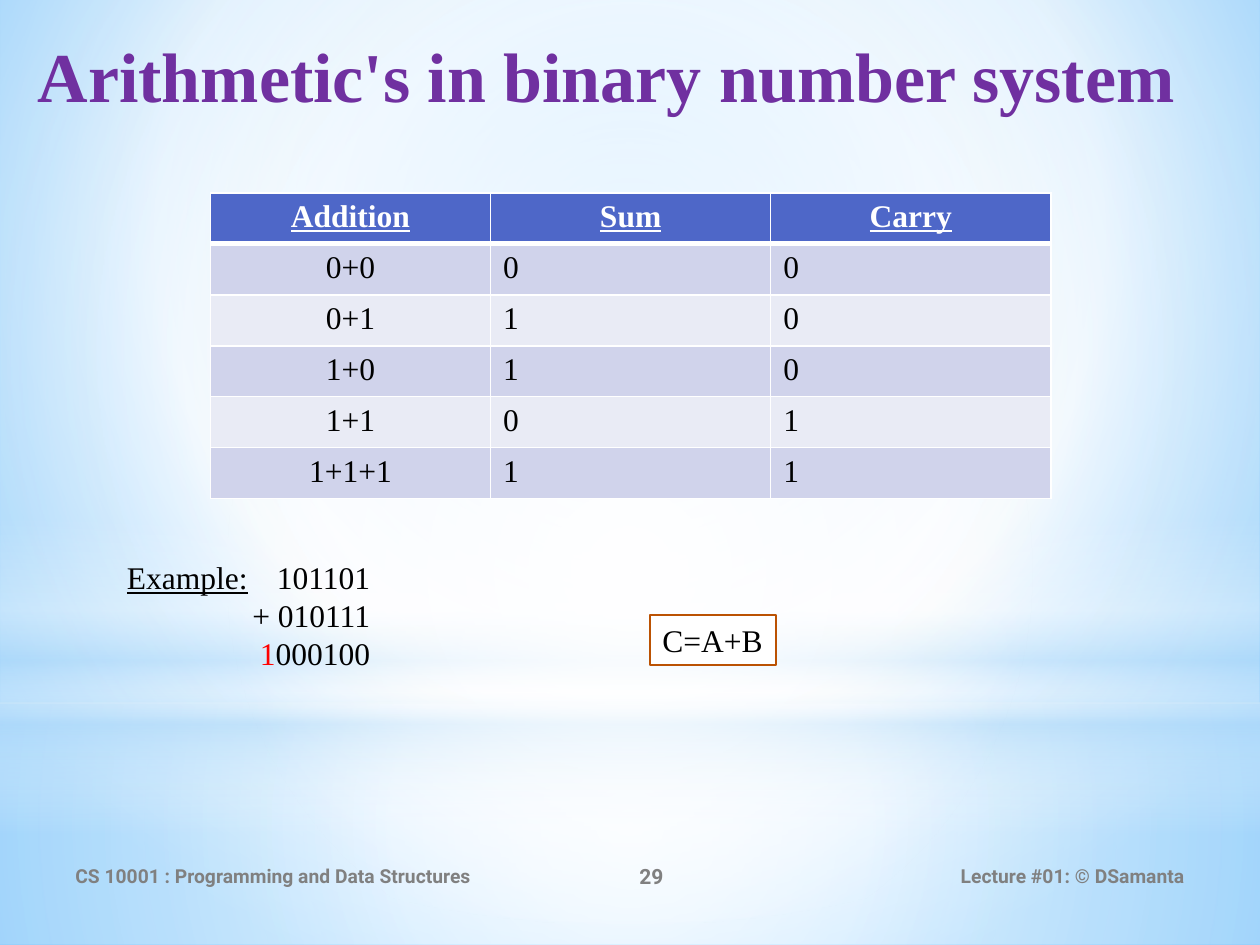
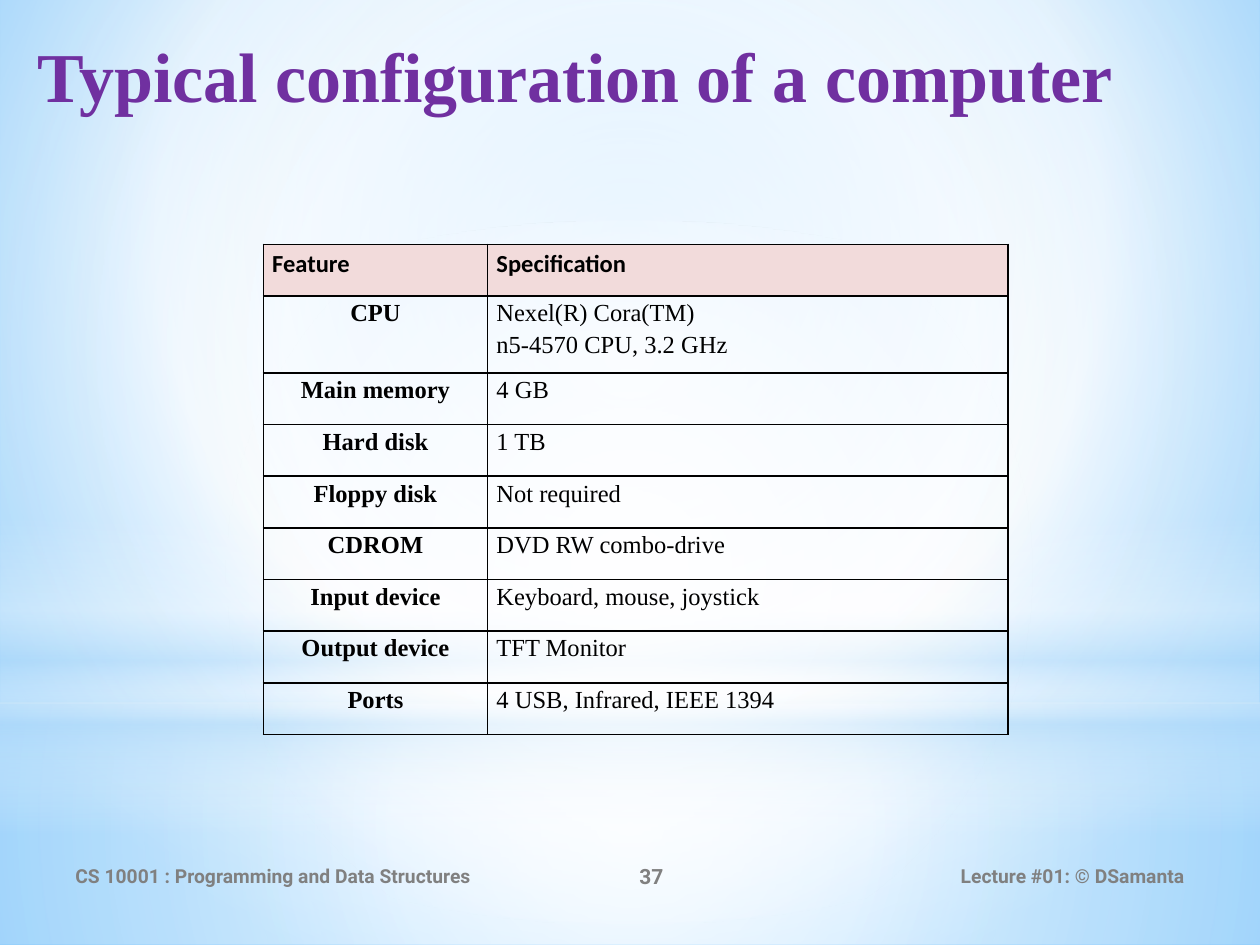
import lxml.etree
import pptx
import pptx.dml.color
import pptx.enum.shapes
import pptx.enum.text
import pptx.oxml.ns
import pptx.util

Inches = pptx.util.Inches
Pt = pptx.util.Pt
ALIGN = pptx.enum.text.PP_ALIGN
ANCHOR = pptx.enum.text.MSO_ANCHOR
SHAPE = pptx.enum.shapes.MSO_SHAPE
qn = pptx.oxml.ns.qn

COLORS = {
    "title": "7030A0", "footer": "808080", "ink": "000000", "white": "FFFFFF",
    "carry": "FF0000", "formula_line": "BB5203", "header": "4E67C8",
    "band_dark": "D0D3EB", "band_light": "E9EBF5", "feature_header": "F2DBDB",
    "sky": "9ED5FF", "deep_sky": "5BB9FF", "mist": "B4DCFA",
}
SERIF, SANS, FOOTER_FONT = "Times New Roman", "Calibri", "Roboto"
CENTRE = (50, 50, 50, 50)

# Backdrop layers: preset, box, (position, colour, opacity) stops, focus or None for vertical
BACKDROP = [
    (SHAPE.RECTANGLE, (0, 5.58, 10, 1.92),
     [(0, "white", 91), (37, "white", 76), (100, "mist", 79)], CENTRE),
    (SHAPE.RECTANGLE, (0, 0, 10, 5.58),
     [(0, "white", 89), (48, "white", 62), (100, "mist", 79)], CENTRE),
    (SHAPE.RECTANGLE, (0, 4.12, 10, 2.5),
     [(0, "white", 0), (29, "white", 30), (45, "mist", 40),
      (55, "white", 26), (65, "mist", 60), (100, "white", 0)], None),
    (SHAPE.OVAL, (0, 1.75, 10, 5.58), [(0, "white", 100), (56, "white", 0)], CENTRE),
]


def rgb(color):
    return pptx.dml.color.RGBColor.from_string(COLORS[color])


def inches(box):
    return [Inches(length) for length in box]


def add_xml(parent, tag, **attributes):
    return lxml.etree.SubElement(parent, qn(tag), {k: str(v) for k, v in attributes.items()})


def add_run(paragraph, text, size, font=SERIF, color="ink", bold=False, underline=False):
    run = paragraph.add_run()
    run.text = text
    run.font.size = Pt(size)
    run.font.name = font
    run.font.color.rgb = rgb(color)
    run.font.bold = bold
    run.font.underline = underline


def paint_gradient(owner, stops, focus):
    """Replace the owner's first solid fill by a gradient."""
    solid = next(owner.iter(qn("a:solidFill")))
    gradient = lxml.etree.Element(qn("a:gradFill"), rotWithShape="1")
    stop_list = add_xml(gradient, "a:gsLst")
    for position, color, opacity in stops:
        stop = add_xml(stop_list, "a:gs", pos=position * 1000)
        tint = add_xml(stop, "a:srgbClr", val=COLORS[color])
        if opacity < 100:
            add_xml(tint, "a:alpha", val=opacity * 1000)
    if focus:
        circle = add_xml(gradient, "a:path", path="circle")
        add_xml(circle, "a:fillToRect", **{s: v * 1000 for s, v in zip("ltrb", focus)})
    else:
        add_xml(gradient, "a:lin", ang=90 * 60000, scaled=0)
    solid.getparent().replace(solid, gradient)


def build_backdrop(master, slide):
    """Shape the layers on a slide, then hand them to the master."""
    master.background.fill.solid()
    paint_gradient(master.element,
                   [(0, "sky", 100), (60, "white", 100), (100, "deep_sky", 100)],
                   (20, 10, 20, 60))
    for order, (preset, box, stops, focus) in enumerate(BACKDROP):
        layer = slide.shapes.add_shape(preset, *inches(box))
        layer.shadow.inherit = False
        layer.line.fill.background()
        layer.fill.solid()
        paint_gradient(layer.element, stops, focus)
        layer.element.nvSpPr.cNvPr.set("id", str(100 + order))
        master.shapes.element.insert(2 + order, layer.element)


def add_title(slide, text):
    title = slide.shapes.title
    title.left, title.top, title.width, title.height = inches((0.2, 0.21, 9.53, 1.1))
    frame = title.text_frame
    frame.auto_size = pptx.enum.text.MSO_AUTO_SIZE.NONE
    frame.vertical_anchor = ANCHOR.TOP
    frame.margin_top = Inches(0.05)
    frame.paragraphs[0].alignment = ALIGN.LEFT
    add_run(frame.paragraphs[0], text, 40, color="title", bold=True)


def add_footer(slide, number):
    for text, left, width, size, align in [
            ("CS 10001 : Programming and Data Structures", 0.5, 3.67, 11, ALIGN.LEFT),
            (str(number), 4.17, 2, 12, ALIGN.CENTER),
            ("Lecture #01: © DSamanta", 6.75, 2.75, 11, ALIGN.RIGHT)]:
        frame = slide.shapes.add_textbox(*inches((left, 6.75, width, 0.4))).text_frame
        frame.word_wrap = True
        frame.vertical_anchor = ANCHOR.MIDDLE
        frame.paragraphs[0].alignment = align
        add_run(frame.paragraphs[0], text, size, FOOTER_FONT, "footer", bold=True)


def style_cell(cell, fill, border, bottom=1):
    """Borders come first, as the cell properties require."""
    properties = cell._tc.get_or_add_tcPr()
    for side in "LRTB":
        width = bottom if side == "B" else 1
        line = add_xml(properties, "a:ln" + side, w=Pt(width))
        add_xml(add_xml(line, "a:solidFill"), "a:srgbClr", val=COLORS[border])
    if fill:
        cell.fill.solid()
        cell.fill.fore_color.rgb = rgb(fill)
    else:
        cell.fill.background()


def addition_table(slide, box):
    rows = [("Addition", "Sum", "Carry"), ("0+0", "0", "0"), ("0+1", "1", "0"),
            ("1+0", "1", "0"), ("1+1", "0", "1"), ("1+1+1", "1", "1")]
    table = slide.shapes.add_table(len(rows), 3, *inches(box)).table
    for r, row in enumerate(rows):
        heading = r == 0
        band = "header" if heading else ("band_light", "band_dark")[r % 2]
        for c, text in enumerate(row):
            cell = table.cell(r, c)
            style_cell(cell, band, "white", bottom=3 if heading else 1)
            paragraph = cell.text_frame.paragraphs[0]
            paragraph.alignment = ALIGN.CENTER if heading or c == 0 else ALIGN.LEFT
            add_run(paragraph, text, 18, color="white" if heading else "ink",
                    bold=heading, underline=heading)


def addition_example(slide, box):
    """Worked sum whose digits line up on a right tab."""
    frame = slide.shapes.add_textbox(*inches(box)).text_frame
    frame.word_wrap = True
    lines = [[("Example:", "ink", True), ("\t101101", "ink", False)],
             [("\t+ 010111", "ink", False)],
             [("\t1", "carry", False), ("000100", "ink", False)]]
    for i, line in enumerate(lines):
        paragraph = frame.add_paragraph() if i else frame.paragraphs[0]
        tabs = add_xml(paragraph._p.get_or_add_pPr(), "a:tabLst")
        add_xml(tabs, "a:tab", pos=Inches(1.93), algn="r")
        for text, color, underline in line:
            add_run(paragraph, text, 18, color=color, underline=underline)


def formula_box(slide, box):
    formula = slide.shapes.add_shape(SHAPE.RECTANGLE, *inches(box))
    formula.shadow.inherit = False
    formula.fill.solid()
    formula.fill.fore_color.rgb = rgb("white")
    formula.line.color.rgb = rgb("formula_line")
    formula.line.width = Pt(1.25)
    frame = formula.text_frame
    frame.word_wrap = False
    frame.vertical_anchor = ANCHOR.TOP
    frame.paragraphs[0].alignment = ALIGN.LEFT
    add_run(frame.paragraphs[0], "C=A+B", 18)


def configuration_table(slide, box):
    rows = [("Feature", "Specification"),
            ("CPU", "Nexel(R) Cora(TM)\nn5-4570 CPU, 3.2 GHz"),
            ("Main memory", "4 GB"), ("Hard disk", "1 TB"),
            ("Floppy disk", "Not required"), ("CDROM", "DVD RW combo-drive"),
            ("Input device", "Keyboard, mouse, joystick"),
            ("Output device", "TFT Monitor"), ("Ports", "4 USB, Infrared, IEEE 1394")]
    table = slide.shapes.add_table(len(rows), 2, *inches(box)).table
    table.horz_banding = False
    table.columns[0].width = Inches(1.78)
    table.columns[1].width = Inches(box[2] - 1.78)
    for r, row in enumerate(rows):
        heading = r == 0
        table.rows[r].height = Inches(0.61 if "\n" in row[1] else 0.41)
        for c, text in enumerate(row):
            cell = table.cell(r, c)
            style_cell(cell, "feature_header" if heading else None, "ink")
            cell.margin_left = cell.margin_right = Inches(0.07)
            cell.margin_top = cell.margin_bottom = 0
            frame = cell.text_frame
            for i, line in enumerate(text.split("\n")):
                paragraph = frame.add_paragraph() if i else frame.paragraphs[0]
                paragraph.line_spacing = 1.15
                paragraph.alignment = ALIGN.LEFT if heading or c else ALIGN.CENTER
                add_run(paragraph, line, 14, SANS if heading else SERIF,
                        bold=heading or c == 0)


def add_lecture_slide(deck, title, number):
    slide = deck.slides.add_slide(deck.slide_layouts.get_by_name("Title Only"))
    add_title(slide, title)
    add_footer(slide, number)
    return slide


def main():
    deck = pptx.Presentation()
    deck.slide_width, deck.slide_height = Inches(10), Inches(7.5)

    # Binary addition
    arithmetic = add_lecture_slide(deck, "Arithmetic's in binary number system", 29)
    build_backdrop(deck.slide_master, arithmetic)
    addition_table(arithmetic, (1.67, 1.53, 6.67, 2.43))
    addition_example(arithmetic, (0.91, 4.38, 2.16, 1.01))
    formula_box(arithmetic, (5.16, 4.88, 1, 0.4))

    # Computer configuration
    configuration = add_lecture_slide(deck, "Typical configuration of a computer", 37)
    configuration_table(configuration, (2.09, 1.94, 5.91, 3.89))

    deck.save("out.pptx")


if __name__ == "__main__":
    main()
